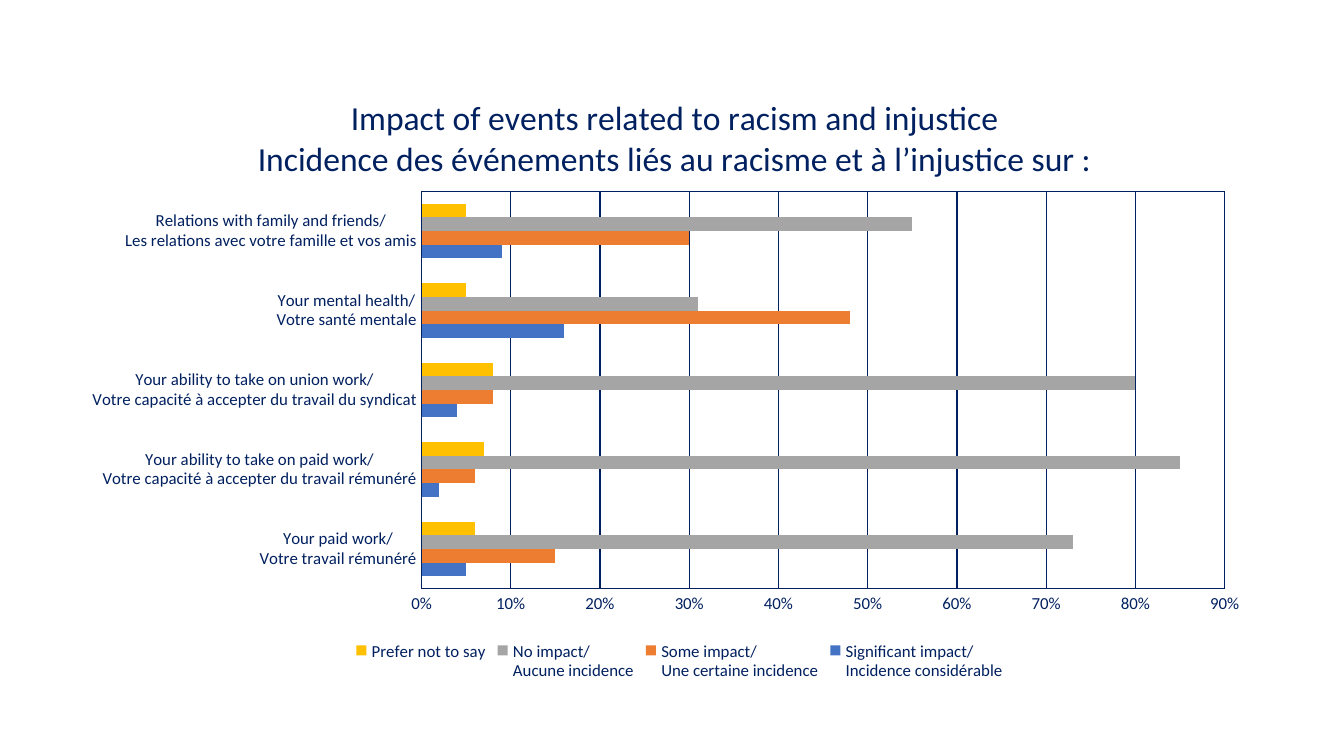
from dataclasses import dataclass

from lxml import etree
from pptx import Presentation
from pptx.chart.data import CategoryChartData
from pptx.dml.color import RGBColor
from pptx.enum.chart import XL_CHART_TYPE, XL_LEGEND_POSITION, XL_TICK_MARK
from pptx.util import Pt

BARS = XL_CHART_TYPE.BAR_CLUSTERED
BOTTOM = XL_LEGEND_POSITION.BOTTOM
NO_TICK = XL_TICK_MARK.NONE
FONT = "Calibri"
NS_C = "http://schemas.openxmlformats.org/drawingml/2006/chart"
NS_A = "http://schemas.openxmlformats.org/drawingml/2006/main"
COLORS = {"navy": "002060", "blue": "4472C4", "orange": "ED7D31",
          "gray": "A5A5A5", "gold": "FFC000"}


@dataclass
class Answer:
    name: str
    color: str
    shares: tuple[float, ...]


TITLE = ("Impact of events related to racism and injustice",
         "Incidence des événements liés au racisme et à l’injustice sur :")
TOPICS = (
    "Your paid work/\nVotre travail rémunéré",
    "Your ability to take on paid work/\nVotre capacité à accepter du travail rémunéré",
    "Your ability to take on union work/\nVotre capacité à accepter du travail du syndicat",
    "Your mental health/\nVotre santé mentale",
    "Relations with family and friends/\nLes relations avec votre famille et vos amis",
)
ANSWERS = (
    Answer("Significant impact/\nIncidence considérable", "blue",
           (0.05, 0.02, 0.04, 0.16, 0.09)),
    Answer("Some impact/\nUne certaine incidence", "orange",
           (0.15, 0.06, 0.08, 0.48, 0.3)),
    Answer("No impact/\nAucune incidence", "gray",
           (0.73, 0.85, 0.8, 0.31, 0.55)),
    Answer("Prefer not to say", "gold",
           (0.06, 0.07, 0.08, 0.05, 0.05)),
)


def rgb(key: str) -> RGBColor:
    return RGBColor.from_string(COLORS[key])


def style(font, size: float) -> None:
    font.name = FONT
    font.size = Pt(size)
    font.bold = False
    font.color.rgb = rgb("navy")


def rule(line) -> None:
    line.color.rgb = rgb("navy")
    line.width = Pt(0.75)


def place(host, inner: bool = False, **spots: float) -> None:
    """Set a manual layout, in fractions of the chart."""
    old = host.find(f"{{{NS_C}}}layout")
    if old is not None:
        host.remove(old)
    layout = etree.Element(f"{{{NS_C}}}layout")
    manual = etree.SubElement(layout, f"{{{NS_C}}}manualLayout")
    items = {"layoutTarget": "inner"} if inner else {}
    items |= {"xMode": "edge", "yMode": "edge"}
    items |= {key: str(spot) for key, spot in spots.items()}
    for tag, val in items.items():
        etree.SubElement(manual, f"{{{NS_C}}}{tag}", val=val)
    over = host.find(f"{{{NS_C}}}overlay")
    host.insert(0 if over is None else host.index(over), layout)


def frame(area) -> None:
    """Outline the plot area."""
    area.append(etree.fromstring(
        f'<c:spPr xmlns:c="{NS_C}" xmlns:a="{NS_A}"><a:noFill/>'
        f'<a:ln w="{Pt(0.75)}"><a:solidFill><a:srgbClr val="{COLORS["navy"]}"/>'
        '</a:solidFill></a:ln></c:spPr>'))


def main() -> None:
    prs = Presentation()
    prs.slide_width, prs.slide_height = Pt(720), Pt(405)
    slide = prs.slides.add_slide(prs.slide_layouts[6])

    # Bar chart
    data = CategoryChartData(number_format="0%")
    data.categories = TOPICS
    for answer in ANSWERS:
        data.add_series(answer.name, answer.shares)
    chart = slide.shapes.add_chart(
        BARS, Pt(39.6), Pt(36), Pt(642.24), Pt(332.64), data).chart
    style(chart.font, 9)
    plot = chart.plots[0]
    plot.gap_width = 182
    plot.overlap = 0
    plot.vary_by_categories = False
    for series, answer in zip(plot.series, ANSWERS):
        series.format.fill.solid()
        series.format.fill.fore_color.rgb = rgb(answer.color)

    # Axes
    topics, shares = chart.category_axis, chart.value_axis
    for axis in (topics, shares):
        axis.major_tick_mark = axis.minor_tick_mark = NO_TICK
        style(axis.tick_labels.font, 9)
    rule(topics.format.line)
    shares.format.line.fill.background()
    shares.minimum_scale, shares.maximum_scale = 0, 0.9
    shares.major_unit = 0.1
    shares.has_major_gridlines = True
    rule(shares.major_gridlines.format.line)
    shares.tick_labels.number_format = "0%"
    shares.tick_labels.number_format_is_linked = False

    # Title
    chart.has_title = True
    title = chart.chart_title
    title.include_in_layout = False
    text = title.text_frame
    for i, words in enumerate(TITLE):
        para = text.add_paragraph() if i else text.paragraphs[0]
        run = para.add_run()
        run.text = words
        style(run.font, 18)

    # Legend
    chart.has_legend = True
    legend = chart.legend
    legend.position = BOTTOM
    legend.include_in_layout = False
    style(legend.font, 9)

    # Layout of the chart parts
    area = chart._chartSpace.chart.plotArea
    place(area, inner=True, x=0.29, y=0.2, w=0.67, h=0.64)
    frame(area)
    place(title._element, x=0.15, y=0.04)
    place(legend._element, x=0.23, y=0.92, w=0.55, h=0.08)

    prs.save("out.pptx")


if __name__ == "__main__":
    main()
